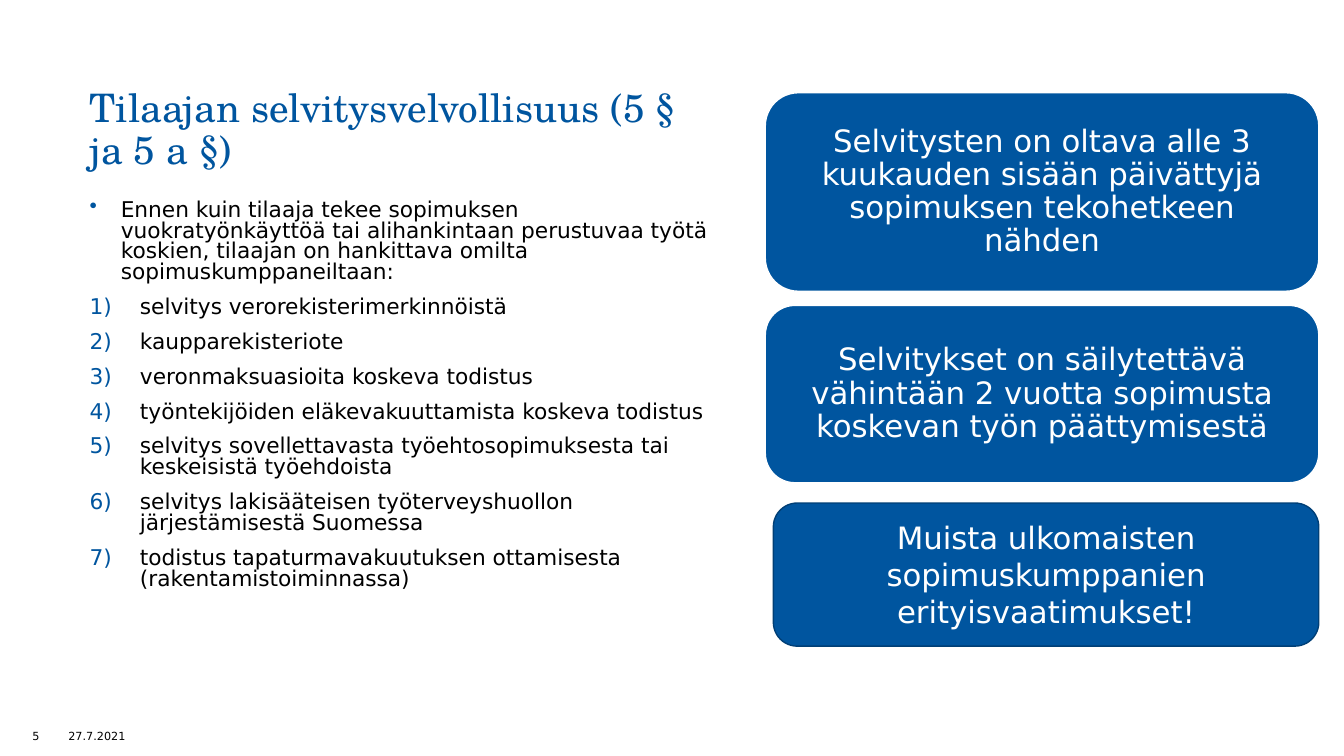
from lxml.etree import SubElement
from pptx import Presentation
from pptx.dml.color import RGBColor
from pptx.enum.shapes import MSO_SHAPE
from pptx.enum.text import MSO_ANCHOR, MSO_AUTO_SIZE, PP_ALIGN
from pptx.oxml.ns import qn
from pptx.util import Pt

PX = 9144
BLUE, NAVY, WHITE, BLACK = "00559F", "003F76", "FFFFFF", "000000"
SANS, SERIF = "DejaVu Sans", "TeX Gyre Schola"

TITLE = "Tilaajan selvitysvelvollisuus (5 § ja 5 a §)"
INTRODUCTION = (
    "Ennen kuin tilaaja tekee sopimuksen vuokratyönkäyttöä tai alihankintaan "
    "perustuvaa työtä koskien, tilaajan on hankittava omilta sopimuskumppaneiltaan:"
)
REQUIRED_DOCUMENTS = [
    "selvitys verorekisterimerkinnöistä",
    "kaupparekisteriote",
    "veronmaksuasioita koskeva todistus",
    "työntekijöiden eläkevakuuttamista koskeva todistus",
    "selvitys sovellettavasta työehtosopimuksesta tai keskeisistä työehdoista",
    "selvitys lakisääteisen työterveyshuollon järjestämisestä Suomessa",
    "todistus tapaturmavakuutuksen ottamisesta (rakentamistoiminnassa)",
]
CALLOUTS = [
    ("Selvitysten on oltava alle 3 kuukauden sisään päivättyjä sopimuksen "
     "tekohetkeen nähden", (759, 92, 549, 197), WHITE, 19, 0.9),
    ("Selvitykset on säilytettävä vähintään 2 vuotta sopimusta koskevan työn "
     "päättymisestä", (759, 303, 549, 176), WHITE, 19, 0.9),
    ("Muista ulkomaisten sopimuskumppanien erityisvaatimukset!",
     (767, 499, 541, 142), NAVY, 10, 1.0),
]


def color(value):
    """Return the colour for a hex string."""
    return RGBColor.from_string(value)


def scaled(box):
    """Turn a box in px into EMU lengths."""
    return [length * PX for length in box]


def add_run(paragraph, text, size, font=SANS, hue=BLACK):
    """Add one formatted run to a paragraph."""
    run = paragraph.add_run()
    run.text = text
    run.font.size = Pt(size)
    run.font.name = font
    run.font.color.rgb = color(hue)


def set_bullet(paragraph, indent, tag, **attributes):
    """Give a paragraph a blue hanging bullet or number."""
    properties = paragraph._p.get_or_add_pPr()
    properties.set("marL", str(indent * PX))
    properties.set("indent", str(-indent * PX))
    bullet_color = SubElement(properties, qn("a:buClr"))
    SubElement(bullet_color, qn("a:srgbClr"), val=BLUE)
    SubElement(properties, qn(tag), **attributes)


def add_title(slide, box):
    """Place and format the slide title."""
    title = slide.shapes.title
    title.left, title.top, title.width, title.height = scaled(box)
    frame = title.text_frame
    frame.auto_size = MSO_AUTO_SIZE.NONE
    frame.vertical_anchor = MSO_ANCHOR.BOTTOM
    paragraph = frame.paragraphs[0]
    paragraph.alignment = PP_ALIGN.LEFT
    paragraph.line_spacing = 0.9
    add_run(paragraph, TITLE, 28, SERIF, BLUE)


def add_requirements(slide, box):
    """Add the introduction and the numbered list of documents."""
    frame = slide.shapes.add_textbox(*scaled(box)).text_frame
    frame.word_wrap = True
    introduction = frame.paragraphs[0]
    set_bullet(introduction, 31, "a:buChar", char="•")
    introduction.line_spacing = 0.8
    add_run(introduction, INTRODUCTION, 15.5)
    for document in REQUIRED_DOCUMENTS:
        paragraph = frame.add_paragraph()
        set_bullet(paragraph, 50, "a:buAutoNum", type="arabicParenR")
        paragraph.line_spacing = 0.8
        paragraph.space_before = Pt(10)
        add_run(paragraph, document, 15.5)


def add_callout(slide, text, box, outline, inset, spacing):
    """Add a rounded blue panel with centred white text."""
    panel = slide.shapes.add_shape(MSO_SHAPE.ROUNDED_RECTANGLE, *scaled(box))
    panel.shadow.inherit = False
    panel.fill.solid()
    panel.fill.fore_color.rgb = color(BLUE)
    panel.line.color.rgb = color(outline)
    panel.line.width = Pt(1)
    frame = panel.text_frame
    frame.word_wrap = True
    frame.vertical_anchor = MSO_ANCHOR.MIDDLE
    frame.margin_left = frame.margin_right = inset * PX
    paragraph = frame.paragraphs[0]
    paragraph.alignment = PP_ALIGN.CENTER
    paragraph.line_spacing = spacing
    add_run(paragraph, text, 22, hue=WHITE)


def add_footer_text(slide, text, box, alignment):
    """Add a small text at the foot of the slide."""
    frame = slide.shapes.add_textbox(*scaled(box)).text_frame
    frame.word_wrap = True
    frame.vertical_anchor = MSO_ANCHOR.MIDDLE
    paragraph = frame.paragraphs[0]
    paragraph.alignment = alignment
    add_run(paragraph, text, 8)


def main():
    """Build and save the presentation."""
    presentation = Presentation()
    presentation.slide_width, presentation.slide_height = scaled((1333, 750))
    slide = presentation.slides.add_slide(presentation.slide_layouts[5])
    add_title(slide, (79, 78, 633, 99))
    add_requirements(slide, (79, 194, 653, 435))
    for callout in CALLOUTS:
        add_callout(slide, *callout)
    add_footer_text(slide, "27.7.2021", (58, 710, 96, 40), PP_ALIGN.LEFT)
    add_footer_text(slide, "5", (0, 710, 49, 40), PP_ALIGN.RIGHT)
    presentation.save("out.pptx")


if __name__ == "__main__":
    main()
